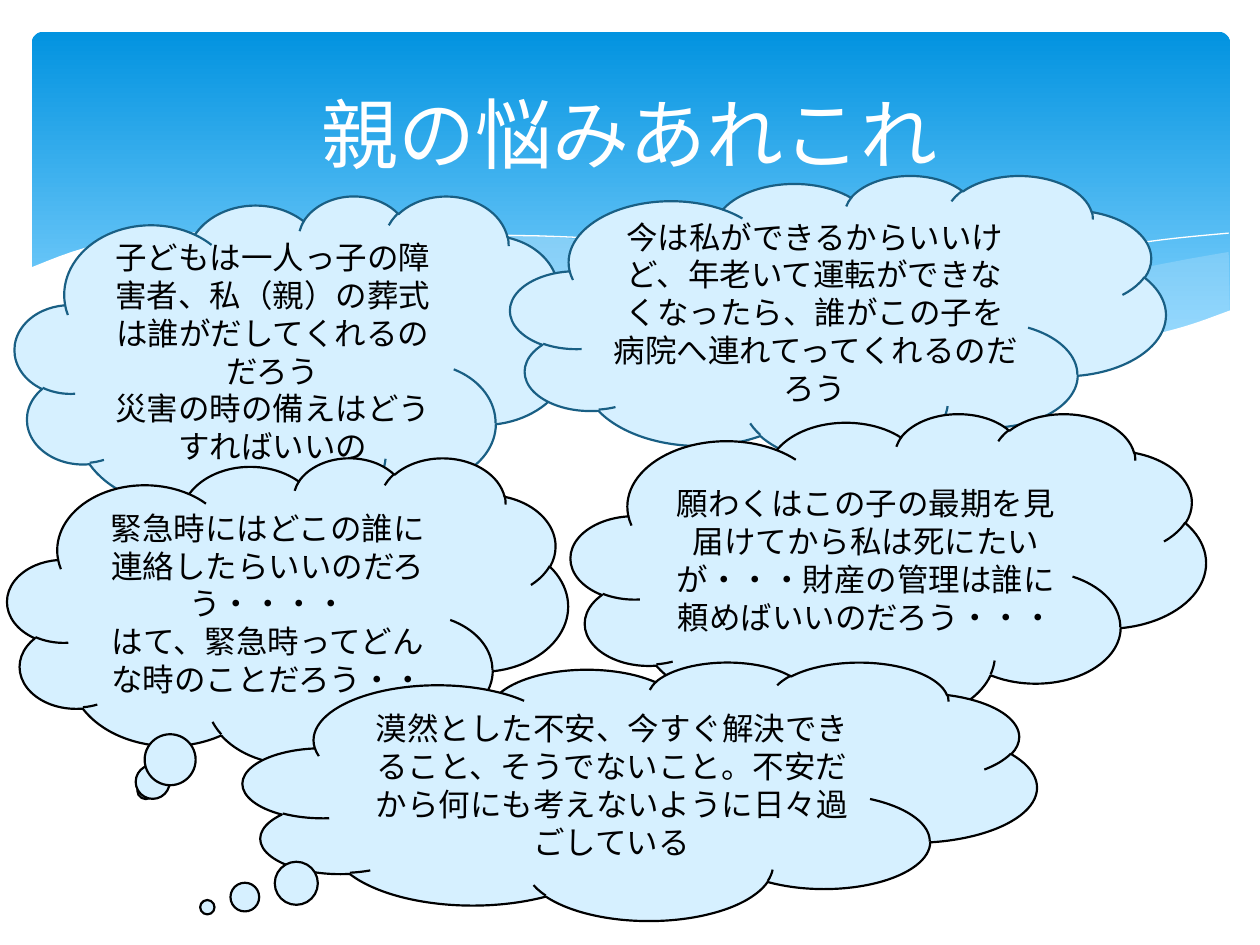
from dataclasses import dataclass

from lxml import etree
from pptx import Presentation
from pptx.dml.color import RGBColor
from pptx.enum.shapes import MSO_SHAPE
from pptx.enum.text import MSO_ANCHOR, PP_ALIGN
from pptx.oxml.ns import qn
from pptx.util import Cm, Pt

CLOUD = MSO_SHAPE.CLOUD_CALLOUT
ROUNDED = MSO_SHAPE.ROUNDED_RECTANGLE
CENTER = PP_ALIGN.CENTER
MIDDLE = MSO_ANCHOR.MIDDLE


@dataclass(frozen=True)
class Theme:
    font: str = "Calibri"
    title_size: int = 44
    body_size: int = 18
    outline: float = 1.25
    hairline: int = 0
    white: str = "FFFFFF"
    ink: str = "000000"
    sky: str = "0293E0"
    horizon: str = "83D3FE"
    swell: str = "C6E7FC"
    cloud: str = "D6F0FF"
    navy: str = "195F84"


THEME = Theme()


def smooth(knots, steps=5):
    padded = [knots[0], *knots, knots[-1]]
    curve = [knots[0]]
    for a, b, c, d in zip(padded, padded[1:], padded[2:], padded[3:]):
        for step in range(1, steps + 1):
            t = step / steps
            curve.append(tuple(
                q + t * (r - p) / 2
                + t * t * (2 * p - 5 * q + 4 * r - s) / 2
                + t ** 3 * (3 * q - p - 3 * r + s) / 2
                for p, q, r, s in zip(a, b, c, d)))
    return curve


class SlideBuilder:
    def __init__(self, slide, theme):
        self.slide = slide
        self.theme = theme

    def colour(self, fill, value):
        fill.solid()
        fill.fore_color.rgb = RGBColor.from_string(value)

    def sky(self, left, top, width, height):
        panel = self.slide.shapes.add_shape(
            ROUNDED, Cm(left), Cm(top), Cm(width), Cm(height))
        panel.shadow.inherit = False
        panel.adjustments[0] = 0.034
        panel.fill.gradient()
        panel.fill.gradient_angle = 270
        stops = ((0, self.theme.sky), (0.9, self.theme.horizon))
        for stop, (position, value) in zip(panel.fill.gradient_stops, stops):
            stop.position = position
            stop.color.rgb = RGBColor.from_string(value)
        panel.line.fill.background()

    def curve(self, points, closed):
        (start_x, start_y), *rest = [(Cm(x), Cm(y)) for x, y in points]
        builder = self.slide.shapes.build_freeform(start_x, start_y)
        builder.add_line_segments(rest, close=closed)
        shape = builder.convert_to_shape()
        shape.shadow.inherit = False
        return shape

    def wave(self, points, value, opacity=100):
        wave = self.curve(points, True)
        self.colour(wave.fill, value)
        wave.line.fill.background()
        if opacity < 100:
            tint = wave.element.spPr.find(qn("a:solidFill"))[0]
            etree.SubElement(tint, qn("a:alpha")).set("val", str(opacity * 1000))

    def crest(self, points):
        crest = self.curve(points, False)
        crest.fill.background()
        self.colour(crest.line.fill, self.theme.white)
        crest.line.width = Pt(self.theme.hairline)

    def fill_text(self, frame, paragraphs, size, value):
        frame.word_wrap = True
        frame.vertical_anchor = MIDDLE
        for index, words in enumerate(paragraphs):
            paragraph = frame.add_paragraph() if index else frame.paragraphs[0]
            paragraph.alignment = CENTER
            run = paragraph.add_run()
            run.text = words
            run.font.name = self.theme.font
            run.font.size = Pt(size)
            run.font.color.rgb = RGBColor.from_string(value)

    def title(self, words, left, top, width, height):
        title = self.slide.shapes.title
        title.element.getparent().append(title.element)
        title.left, title.top = Cm(left), Cm(top)
        title.width, title.height = Cm(width), Cm(height)
        self.fill_text(title.text_frame, [words], self.theme.title_size, self.theme.white)

    def worry(self, box, outline, paragraphs, tail=None):
        cloud = self.slide.shapes.add_shape(CLOUD, *[Cm(length) for length in box])
        cloud.shadow.inherit = False
        if tail:
            cloud.adjustments[0], cloud.adjustments[1] = tail
        self.colour(cloud.fill, self.theme.cloud)
        self.colour(cloud.line.fill, outline)
        cloud.line.width = Pt(self.theme.outline)
        self.fill_text(cloud.text_frame, paragraphs, self.theme.body_size, self.theme.ink)


RIGHT_TOP = [(24.77, 5.08), (23.75, 5.26), (22.63, 5.49), (21.13, 5.84),
             (19.13, 6.3), (16.79, 6.73)]
RIGHT_BOTTOM = [(16.79, 6.73), (17.91, 6.88), (19.23, 7.01), (20.68, 7.06),
                (21.92, 6.99), (23.19, 6.78), (24.1, 6.53), (24.79, 6.27)]
MIDDLE_TOP = [(22.68, 6.93), (20.5, 6.6), (17.93, 6.1), (15.98, 5.64),
              (14.1, 5.21), (12.42, 4.9), (10.67, 4.75), (9.17, 4.7), (7.26, 4.85)]
MIDDLE_BOTTOM = [(7.26, 4.85), (9.19, 5.16), (11.4, 5.64), (13.46, 6.1),
                 (15.27, 6.48), (17.27, 6.81), (19, 7.01), (20.78, 7.06), (22.68, 6.93)]
FALLING_CREST = [(7.85, 4.95), (8.74, 4.83), (10.19, 4.75), (11.91, 4.8),
                 (13.54, 4.93), (15.44, 5.18), (17.65, 5.56), (20.19, 6.12), (23.04, 6.91)]
RISING_CREST = [(15.57, 6.53), (17.65, 5.97), (19.71, 5.49), (22, 5.05),
                (23.47, 4.83), (24.77, 4.7)]
SHORE = [(24.82, 6.25), (23.88, 6.58), (22.83, 6.83), (21.59, 6.99), (20.14, 7.01),
         (18.44, 6.91), (16.46, 6.65), (14.1, 6.22), (11.35, 5.59), (9.27, 5.13),
         (7.42, 4.83), (5.84, 4.7), (4.5, 4.67), (3.02, 4.75), (1.7, 5), (0.58, 5.41)]
SHORE_BASE = [(0.58, 8.36), (24.82, 8.36)]

WORRIES = [
    ((0.3, 3.94, 11.2, 6.6), THEME.navy,
     ["子どもは一人っ子の障害者、私（親）の葬式は誰がだしてくれるのだろう",
      "災害の時の備えはどうすればいいの"]),
    ((10.29, 3.53, 13.21, 5.79), THEME.navy,
     ["今は私ができるからいいけど、年老いて運転ができなくなったら、誰がこの子を病院へ連れてってくれるのだろう"]),
    ((0.15, 9.22, 11.3, 6.17), THEME.ink,
     ["緊急時にはどこの誰に連絡したらいいのだろう・・・・",
      "はて、緊急時ってどんな時のことだろう・・"], (-0.253, 0.589)),
    ((11.51, 8.33, 12.8, 6.2), THEME.ink,
     ["願わくはこの子の最期を見届けてから私は死にたいが・・・財産の管理は誰に頼めばいいのだろう・・・"]),
    ((4.9, 13.34, 16, 5.21), THEME.ink,
     ["漠然とした不安、今すぐ解決できること、そうでないこと。不安だから何にも考えないように日々過ごしている"],
     (-0.545, 0.45)),
]


def main():
    deck = Presentation()
    deck.slide_width, deck.slide_height = Cm(25.4), Cm(19.05)
    page = SlideBuilder(deck.slides.add_slide(deck.slide_layouts[5]), THEME)
    page.sky(0.64, 0.64, 24.16, 6.86)
    page.wave(smooth(RIGHT_TOP) + smooth(RIGHT_BOTTOM), THEME.swell, 29)
    page.wave(smooth(MIDDLE_TOP) + smooth(MIDDLE_BOTTOM), THEME.swell, 40)
    page.crest(smooth(FALLING_CREST))
    page.crest(smooth(RISING_CREST))
    page.wave(smooth(SHORE) + SHORE_BASE, THEME.white)
    page.title("親の悩みあれこれ", 1.27, 0.94, 22.86, 3.48)
    for worry in WORRIES:
        page.worry(*worry)
    deck.save("out.pptx")


if __name__ == "__main__":
    main()
